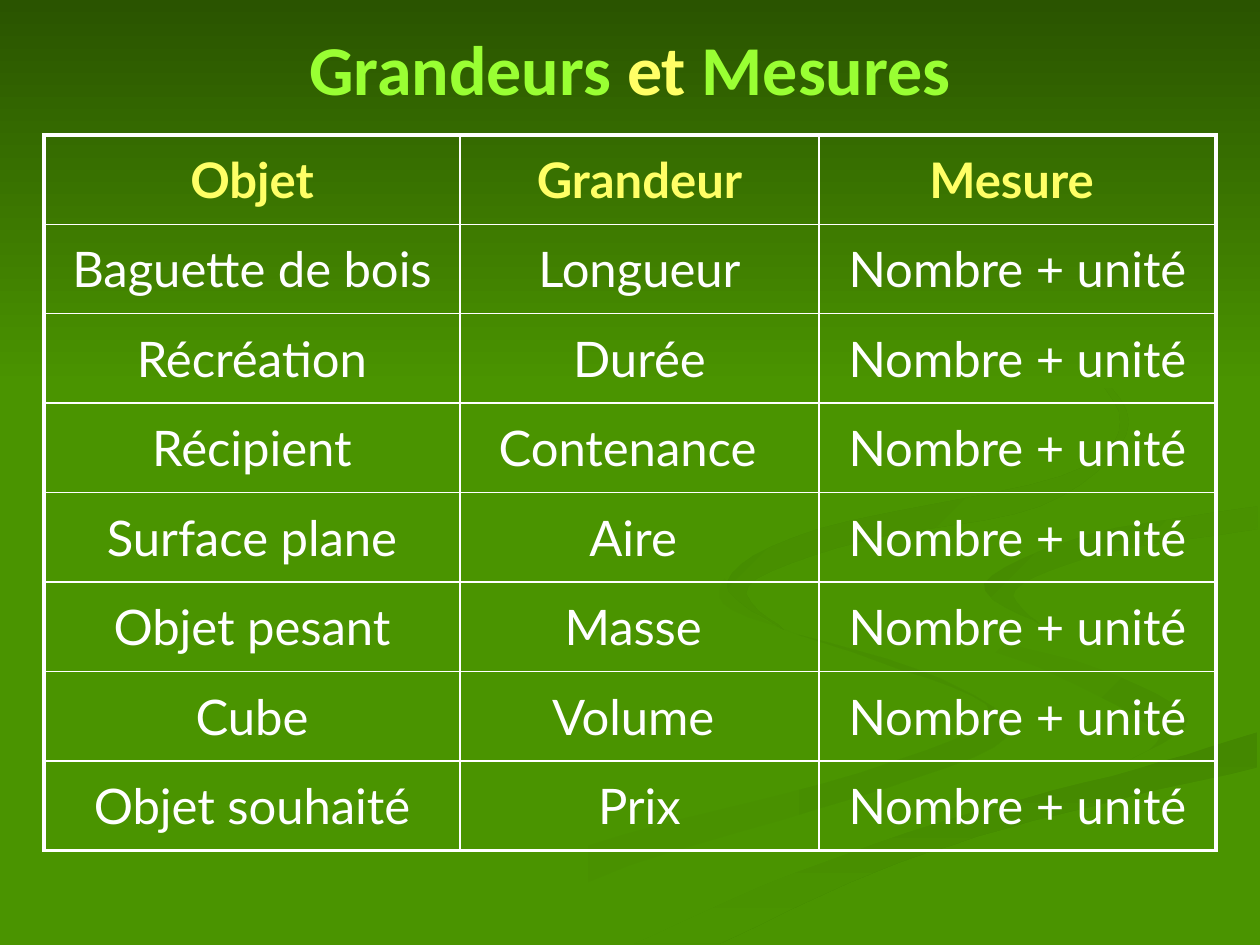
from dataclasses import dataclass

from lxml.etree import SubElement as Sub
from pptx import Presentation
from pptx.dml.color import RGBColor as Rgb
from pptx.enum.text import MSO_ANCHOR as Anchor, PP_ALIGN as Align
from pptx.oxml.ns import qn
from pptx.util import Emu, Pt

PX = 9144
STEPS = 6
HEX = {
    "green": "4A9400", "dark": "2A5400", "moss": "478E00", "leaf": "448800",
    "fern": "468C00", "pine": "458A00", "lime": "99FF33",
    "gold": "FFFF66", "white": "FFFFFF",
}
THIN, THICK = 1, 2.25
COLS = (330, 285, 315)
ROW = 71
UNIT = "Nombre + unité"
HEAD = ("Objet", "Grandeur", "Mesure ")
ITEMS = (
    ("Baguette de bois", "Longueur"),
    ("Récréation", "Durée"),
    ("Récipient", "Contenance"),
    ("Surface plane", "Aire "),
    ("Objet pesant", "Masse "),
    ("Cube", "Volume "),
    ("Objet souhaité", "Prix"),
)

OUTER = ((724, 464), (758, 498), (870, 530), (943, 570), (894, 605))
LOWER = ((503, 749), (630, 693), (764, 647), (903, 610), (998, 581))
UPPER = ((998, 402), (865, 424), (781, 463), (826, 496))


@dataclass
class Ribbon:
    start: str
    end: str
    angle: int
    edges: tuple


RIBBONS = (
    Ribbon("green", "moss", 0, (
        ((575, 459), (614, 496), (745, 538), (799, 585), (676, 634),
         (499, 687), (361, 749)),
        ((300, 749), (458, 674), (684, 613), (786, 566), (697, 525),
         (581, 484), (575, 459)))),
    Ribbon("green", "moss", 45, (
        OUTER, ((894, 605), (918, 581), (838, 536), (746, 500), (724, 464)))),
    Ribbon("leaf", "green", 90, (
        LOWER, ((998, 609), (821, 651), (695, 692), (571, 749)))),
    Ribbon("green", "green", 0, (
        OUTER, ((894, 605), (663, 668), (477, 749)), LOWER,
        ((998, 538), (848, 503), (781, 463), (865, 424), (998, 402)),
        ((998, 387), (830, 415), (724, 464)))),
    Ribbon("fern", "green", 45, (
        UPPER, ((826, 496), (806, 468), (878, 439), (998, 420)))),
    Ribbon("pine", "green", 45, (
        ((762, 233), (864, 291), (894, 344), (825, 402), (683, 430),
         (594, 465), (622, 500)),
        ((622, 500), (577, 462), (649, 420), (842, 378), (889, 335),
         (846, 279), (762, 233)))),
    Ribbon("dark", "green", 90, (
        ((0, 0), (0, 308)), ((1000, 308), (1000, 0)))),
)


def px(n: int) -> Emu:
    return Emu(n * PX)


def tint(name: str) -> Rgb:
    return Rgb.from_string(HEX[name])


def write(para, text: str, *, size=28, font="Lato", color="white", bold=False):
    run = para.add_run()
    run.text = text
    face = run.font
    face.size, face.name, face.bold = Pt(size), font, bold
    face.color.rgb = tint(color)
    para.alignment = Align.CENTER


def blend(a: int, b: int, c: int, d: int, t: float) -> float:
    return b + t * (c - a + t * (2 * a - 5 * b + 4 * c - d
                                 + t * (3 * (b - c) + d - a))) / 2


def smooth(edge: tuple) -> list:
    knots = (edge[0], *edge, edge[-1])
    curve = [
        tuple(blend(*axis, n / STEPS) for axis in zip(*knots[i:i + 4]))
        for i in range(len(edge) - 1) for n in range(STEPS)]
    return curve + [edge[-1]]


def draw(shapes, ribbon: Ribbon):
    first, *rest = [
        spot for edge in ribbon.edges
        for spot in (smooth(edge) if len(edge) > 2 else edge)]
    pen = shapes.build_freeform(*first, scale=PX)
    pen.add_line_segments(rest, close=True)
    form = pen.convert_to_shape()
    form.shadow.inherit = False
    form.line.fill.background()
    if ribbon.start == ribbon.end:
        form.fill.solid()
        form.fill.fore_color.rgb = tint(ribbon.start)
        return
    form.fill.gradient()
    form.fill.gradient_angle = (360 - ribbon.angle) % 360
    for stop, name in zip(form.fill.gradient_stops, (ribbon.start, ribbon.end)):
        stop.color.rgb = tint(name)


def rule(cell, side: str, width: float):
    line = Sub(cell._tc.get_or_add_tcPr(), qn(f"a:ln{side}"), w=str(Pt(width)))
    fill = Sub(line, qn("a:solidFill"))
    Sub(fill, qn("a:srgbClr"), val=HEX["white"])


def fill_grid(shapes):
    rows = [HEAD] + [(*item, UNIT) for item in ITEMS]
    high, wide = len(rows), len(COLS)
    grid = shapes.add_table(
        high, wide, px(35), px(107), px(sum(COLS)), px(ROW * high)).table
    grid.first_row = grid.horz_banding = False
    for col, width in zip(grid.columns, COLS):
        col.width = px(width)
    for r, row in enumerate(rows):
        grid.rows[r].height = px(ROW)
        for c, text in enumerate(row):
            cell = grid.cell(r, c)
            outer = {"L": c == 0, "R": c == wide - 1,
                     "T": r == 0, "B": r == high - 1}
            for side, out in outer.items():
                rule(cell, side, THICK if out else THIN)
            cell.fill.background()
            cell.vertical_anchor = Anchor.MIDDLE
            if text == "Contenance":
                cell.margin_right = px(29)
            para = cell.text_frame.paragraphs[0]
            para.space_before = Pt(6)
            write(para, text, color="white" if r else "gold", bold=r == 0)


def main():
    deck = Presentation()
    deck.slide_width, deck.slide_height = px(1000), px(750)
    slide = deck.slides.add_slide(deck.slide_layouts[5])
    back = slide.background.fill
    back.solid()
    back.fore_color.rgb = tint("green")

    group = slide.shapes.add_group_shape()
    for ribbon in RIBBONS:
        draw(group.shapes, ribbon)

    title = slide.shapes.title
    group._element.addnext(title._element)
    title.left, title.top, title.width, title.height = map(
        px, (50, 0, 900, 107))
    title.text_frame.vertical_anchor = Anchor.MIDDLE
    para = title.text_frame.paragraphs[0]
    for text, color in (
            ("Grandeurs ", "lime"), ("et", "gold"), (" Mesures", "lime")):
        write(para, text, size=40, font="Calibri", color=color, bold=True)

    fill_grid(slide.shapes)
    deck.save("out.pptx")


if __name__ == "__main__":
    main()
